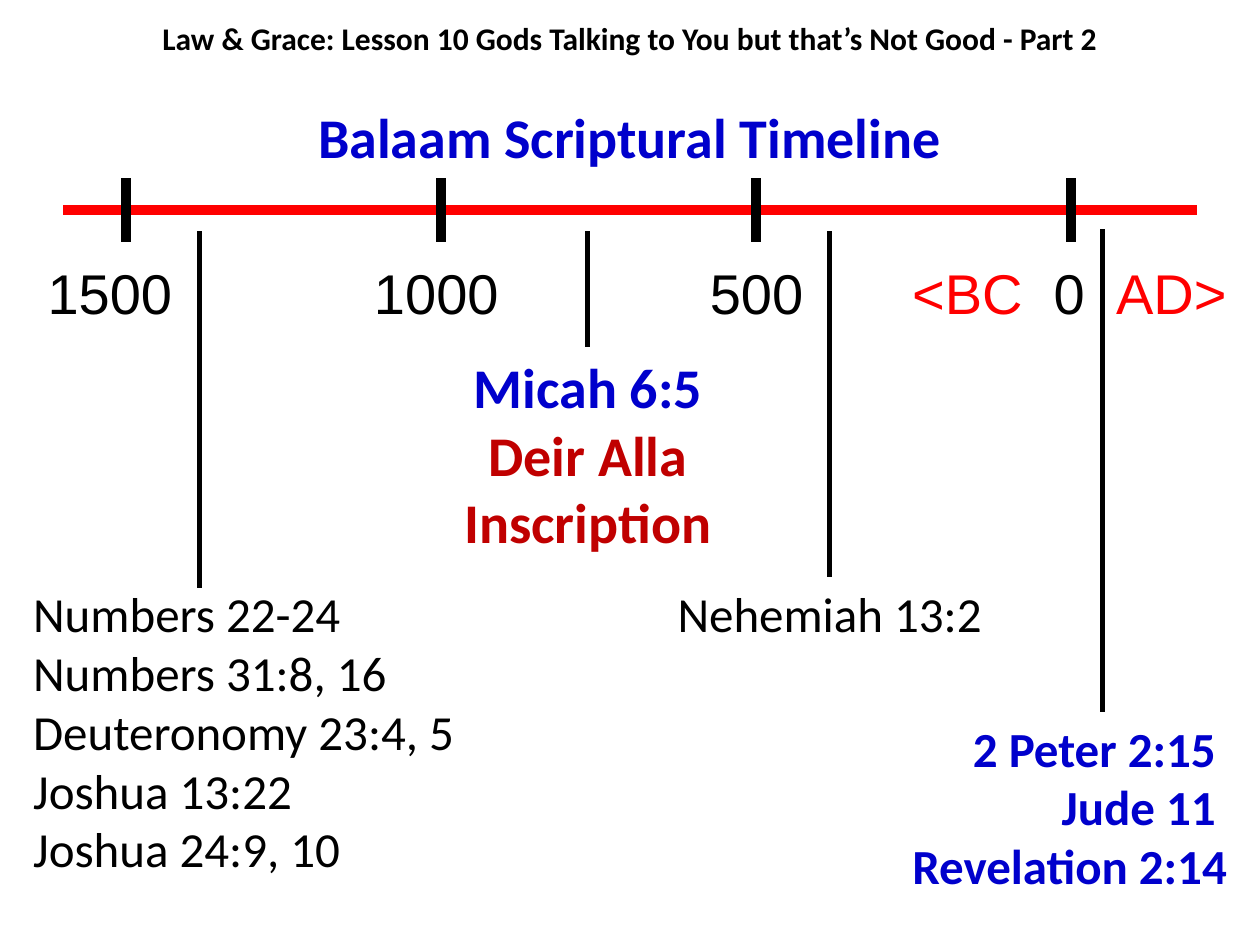
from lxml import etree
from pptx import Presentation
from pptx.dml.color import RGBColor
from pptx.enum.shapes import MSO_CONNECTOR
from pptx.enum.text import MSO_ANCHOR, PP_ALIGN
from pptx.oxml.ns import qn
from pptx.util import Cm, Pt

BLACK, RED, BLUE, DARK_RED = "000000", "FF0000", "0000CC", "C00000"
LEFT, CENTER, RIGHT = PP_ALIGN.LEFT, PP_ALIGN.CENTER, PP_ALIGN.RIGHT

# Lengths in cm.
AXIS = {"left": 1.27, "right": 24.13, "y": 4.23}
TICKS = {"first": 2.54, "gap": 6.35, "count": 4, "half": 0.64}
# x, top, bottom
EVENT_LINES = [
    (4.02, 4.66, 11.85),
    (11.85, 4.66, 6.99),
    (16.72, 4.66, 11.64),
    (22.23, 4.62, 14.35),
]

# text, colour, tab stop
AXIS_LABELS = [
    ("1500", BLACK, 0.71),
    ("1000", BLACK, 7.29),
    ("500", BLACK, 14.06),
    ("<BC", RED, 18.14),
    ("0", BLACK, 20.99),
    ("AD>", RED, 22.25),
]
AXIS_LABEL_BOX = (0, 5.08, 25.4, 1.6)

# place, alignment, anchor, size, bold, paragraphs of (text, colour)
TEXTS = [
    ((2.96, 0.25, 19.48, 1.02), CENTER, MSO_ANCHOR.TOP, 18, True,
     [("Law & Grace: Lesson 10 Gods Talking to You but that’s Not Good - Part 2", BLACK)]),
    ((0, 1.48, 25.4, 2.54), CENTER, MSO_ANCHOR.MIDDLE, 32, True,
     [("Balaam Scriptural Timeline", BLUE)]),
    ((8.89, 6.99, 5.93, 4.37), CENTER, MSO_ANCHOR.TOP, 32, True,
     [("Micah 6:5", BLUE), ("Deir Alla Inscription", DARK_RED)]),
    ((0.42, 11.64, 11.22, 6.25), LEFT, MSO_ANCHOR.TOP, 28, False,
     [("Numbers 22-24", BLACK),
      ("Numbers 31:8, 16 Deuteronomy 23:4, 5 Joshua 13:22", BLACK),
      ("Joshua 24:9, 10", BLACK)]),
    ((12.49, 11.64, 8.47, 1.45), CENTER, MSO_ANCHOR.TOP, 28, False,
     [("Nehemiah 13:2", BLACK)]),
    ((16.09, 14.35, 8.89, 3.84), RIGHT, MSO_ANCHOR.TOP, 28, True,
     [("2 Peter 2:15 ", BLUE), ("Jude 11 ", BLUE), ("Revelation 2:14", BLUE)]),
]


def rgb(value):
    return RGBColor.from_string(value)


def add_line(page, start, end, color, width):
    line = page.shapes.add_connector(
        MSO_CONNECTOR.STRAIGHT, *(Cm(value) for value in start + end))
    line.line.color.rgb = rgb(color)
    line.line.width = Pt(width)
    etree.SubElement(line._element.spPr, qn("a:effectLst"))


def add_box(page, place, anchor=MSO_ANCHOR.TOP):
    frame = page.shapes.add_textbox(*(Cm(value) for value in place)).text_frame
    frame.word_wrap = True
    frame.vertical_anchor = anchor
    return frame


def add_span(para, text, color, **font_format):
    span = para.add_run()
    span.text = text
    span.font.color.rgb = rgb(color)
    for name, value in font_format.items():
        setattr(span.font, name, value)


def add_axis_labels(page):
    """Put all axis labels in one paragraph, each at its own tab stop."""
    para = add_box(page, AXIS_LABEL_BOX).paragraphs[0]
    stops = etree.SubElement(para._p.get_or_add_pPr(), qn("a:tabLst"))
    for text, color, stop in AXIS_LABELS:
        etree.SubElement(stops, qn("a:tab"), pos=str(Cm(stop)), algn="l")
        add_span(para, "\t" + text, color, name="Arial", size=Pt(32))


def add_text(page, place, alignment, anchor, size, bold, paragraphs):
    frame = add_box(page, place, anchor)
    for index, (text, color) in enumerate(paragraphs):
        para = frame.add_paragraph() if index else frame.paragraphs[0]
        para.alignment = alignment
        add_span(para, text, color, name="Calibri", size=Pt(size), bold=bold)


def main():
    deck = Presentation()
    deck.slide_width, deck.slide_height = Cm(25.4), Cm(19.05)
    page = deck.slides.add_slide(deck.slide_layouts[6])

    y = AXIS["y"]
    add_line(page, (AXIS["left"], y), (AXIS["right"], y), RED, 6)
    for index in range(TICKS["count"]):
        x = TICKS["first"] + index * TICKS["gap"]
        add_line(page, (x, y - TICKS["half"]), (x, y + TICKS["half"]), BLACK, 6)
    for x, top, bottom in EVENT_LINES:
        add_line(page, (x, top), (x, bottom), BLACK, 3)

    add_axis_labels(page)
    for text in TEXTS:
        add_text(page, *text)
    deck.save("out.pptx")


if __name__ == "__main__":
    main()
